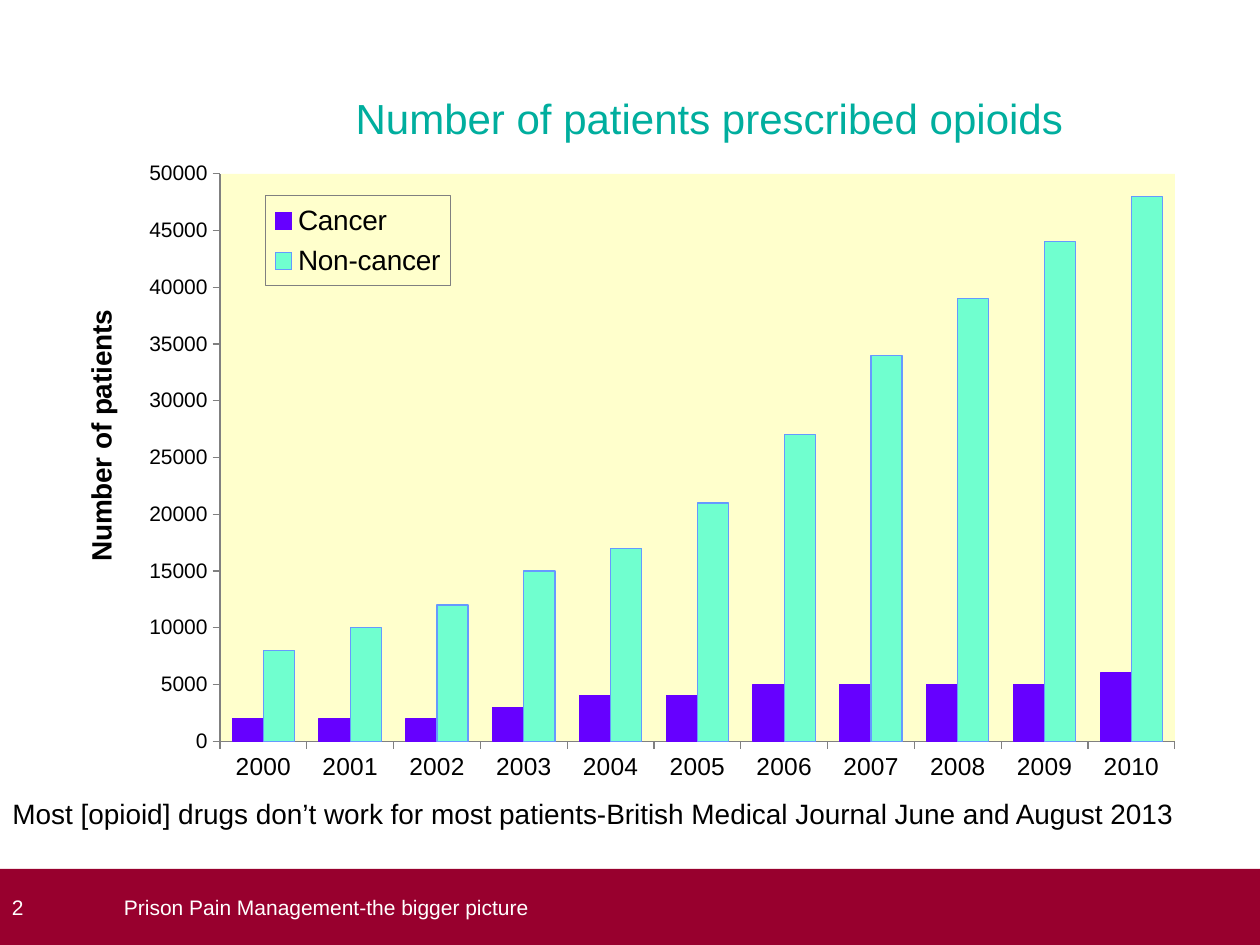
import dataclasses

import pptx
import pptx.chart.data
import pptx.dml.color
import pptx.enum.chart
import pptx.enum.shapes
import pptx.enum.text
import pptx.oxml
import pptx.oxml.ns
import pptx.util

PX = 914400 / 126
CHART_NS = pptx.oxml.ns.nsdecls("c", "a")
qn = pptx.oxml.ns.qn


@dataclasses.dataclass(frozen=True)
class Theme:
    font: str = "Arial"
    text: str = "000000"
    title: str = "00AE9E"
    band: str = "98002E"
    on_band: str = "FFFFFF"
    plot: str = "FFFFCC"
    axis: str = "808080"
    cancer: str = "6600FF"
    non_cancer: str = "70FFCF"
    non_cancer_line: str = "6699FF"
    title_size: int = 24
    chart_size: int = 18
    body_size: int = 16
    category_size: int = 14
    small_size: int = 12


def px(length):
    return pptx.util.Emu(round(length * PX))


def rgb(value):
    return pptx.dml.color.RGBColor.from_string(value)


def set_layout(parent, x, y, w=None, h=None, inner=False):
    """Place a chart part by fractions of the chart frame."""
    layout = parent.find(qn("c:layout"))
    if layout is None:
        layout = pptx.oxml.parse_xml(f"<c:layout {CHART_NS}/>")
        parent.insert(0, layout)
    target = '<c:layoutTarget val="inner"/>' if inner else ""
    sizes = f'<c:w val="{w}"/><c:h val="{h}"/>' if w else ""
    layout.append(pptx.oxml.parse_xml(
        f'<c:manualLayout {CHART_NS}>{target}<c:xMode val="edge"/><c:yMode val="edge"/>'
        f'<c:x val="{x}"/><c:y val="{y}"/>{sizes}</c:manualLayout>'))


def shape_properties(content):
    return pptx.oxml.parse_xml(f"<c:spPr {CHART_NS}>{content}</c:spPr>")


class SlideBuilder:
    def __init__(self, slide, theme):
        self.slide = slide
        self.theme = theme

    def style_font(self, font, size, color=None, bold=False):
        font.name = self.theme.font
        font.size = pptx.util.Pt(size)
        font.bold = bold
        font.color.rgb = rgb(color or self.theme.text)

    def set_text(self, shape, text, size, color, anchor, insets=None, wrap=True):
        frame = shape.text_frame
        frame.text = text
        frame.word_wrap = wrap
        frame.auto_size = pptx.enum.text.MSO_AUTO_SIZE.NONE
        frame.vertical_anchor = anchor
        if insets:
            (frame.margin_left, frame.margin_top,
             frame.margin_right, frame.margin_bottom) = map(px, insets)
        paragraph = frame.paragraphs[0]
        paragraph.alignment = pptx.enum.text.PP_ALIGN.LEFT
        self.style_font(paragraph.font, size, color)

    def title(self, text, x, y, w, h):
        title = self.slide.shapes.title
        title.left, title.top, title.width, title.height = map(px, (x, y, w, h))
        self.set_text(title, text, self.theme.title_size, self.theme.title,
                      pptx.enum.text.MSO_ANCHOR.TOP, wrap=False)

    def text(self, text, x, y, w, h, size, color,
             anchor=pptx.enum.text.MSO_ANCHOR.TOP, insets=None):
        box = self.slide.shapes.add_textbox(*map(px, (x, y, w, h)))
        self.set_text(box, text, size, color, anchor, insets)

    def band(self, text, x, y, w, h, insets):
        band = self.slide.shapes.add_shape(
            pptx.enum.shapes.MSO_SHAPE.RECTANGLE, *map(px, (x, y, w, h)))
        band.shadow.inherit = False
        band.fill.solid()
        band.fill.fore_color.rgb = rgb(self.theme.band)
        band.line.fill.background()
        self.set_text(band, text, self.theme.small_size, self.theme.on_band,
                      pptx.enum.text.MSO_ANCHOR.MIDDLE, insets)

    def column_chart(self, categories, series, x, y, w, h, value_title, maximum, step):
        """Series maps each name to its values, fill and line colour."""
        data = pptx.chart.data.CategoryChartData(number_format="General")
        data.categories = categories
        for name, (values, _, _) in series.items():
            data.add_series(name, values)
        chart = self.slide.shapes.add_chart(
            pptx.enum.chart.XL_CHART_TYPE.COLUMN_CLUSTERED,
            *map(px, (x, y, w, h)), data).chart
        chart.has_title = False
        self.style_font(chart.font, self.theme.chart_size)

        plot = chart.plots[0]
        plot.gap_width = 79
        plot.overlap = 0
        plot.vary_by_categories = False
        for bars, (_, fill, line) in zip(plot.series, series.values()):
            bars.format.fill.solid()
            bars.format.fill.fore_color.rgb = rgb(fill)
            bars.format.line.color.rgb = rgb(line)
            bars.format.line.width = pptx.util.Pt(0.75)

        for axis, size in ((chart.category_axis, self.theme.category_size),
                           (chart.value_axis, self.theme.small_size)):
            axis.has_major_gridlines = False
            axis.major_tick_mark = pptx.enum.chart.XL_TICK_MARK.OUTSIDE
            axis.format.line.color.rgb = rgb(self.theme.axis)
            self.style_font(axis.tick_labels.font, size)
        chart.value_axis.minimum_scale = 0
        chart.value_axis.maximum_scale = maximum
        chart.value_axis.major_unit = step

        axis_title = chart.value_axis.axis_title
        axis_title.text_frame.text = value_title
        self.style_font(axis_title.text_frame.paragraphs[0].font,
                        self.theme.body_size, bold=True)
        set_layout(axis_title._element, 0.01, 0.24)

        plot_area = chart._chartSpace.chart.plotArea
        set_layout(plot_area, 0.135, 0.038, 0.842, 0.872, inner=True)
        plot_area.append(shape_properties(
            f'<a:solidFill><a:srgbClr val="{self.theme.plot}"/></a:solidFill>'))
        self.legend(chart)

    def legend(self, chart):
        chart.has_legend = True
        legend = chart.legend
        legend.position = pptx.enum.chart.XL_LEGEND_POSITION.RIGHT
        legend.include_in_layout = False
        self.style_font(legend.font, self.theme.body_size)
        set_layout(legend._element, 0.175, 0.072, 0.163, 0.138)
        legend._element.find(qn("c:overlay")).addnext(shape_properties(
            f'<a:solidFill><a:srgbClr val="{self.theme.plot}"/></a:solidFill>'
            f'<a:ln w="9525"><a:solidFill><a:srgbClr val="{self.theme.axis}"/>'
            '</a:solidFill></a:ln>'))


def main():
    deck = pptx.Presentation()
    deck.slide_width, deck.slide_height = px(1260), px(945)
    theme = Theme()
    builder = SlideBuilder(deck.slides.add_slide(deck.slide_layouts[5]), theme)

    builder.band("2", 0, 869, 1260, 76, insets=(12, 0, 13, 0))
    builder.text("Prison Pain Management-the bigger picture", 124, 869, 1111, 76,
                 theme.small_size, theme.on_band,
                 pptx.enum.text.MSO_ANCHOR.MIDDLE, insets=(0, 0, 0, 0))
    patients = {
        "Cancer": ([2000, 2000, 2000, 3000, 4000, 4000, 5000, 5000, 5000, 5000, 6000],
                   theme.cancer, theme.cancer),
        "Non-cancer": ([8000, 10000, 12000, 15000, 17000, 21000, 27000, 34000, 39000,
                        44000, 48000], theme.non_cancer, theme.non_cancer_line),
    }
    years = [str(year) for year in range(2000, 2011)]
    builder.column_chart(years, patients, 67, 149, 1134, 651,
                         "Number of patients", maximum=50000, step=5000)
    builder.text("Most [opioid] drugs don’t work for most patients-British Medical "
                 "Journal June and August 2013", 0, 790, 1200, 47,
                 theme.body_size, theme.text)
    builder.title("Number of patients prescribed opioids", 343, 86, 741, 63)
    deck.save("out.pptx")


if __name__ == "__main__":
    main()
